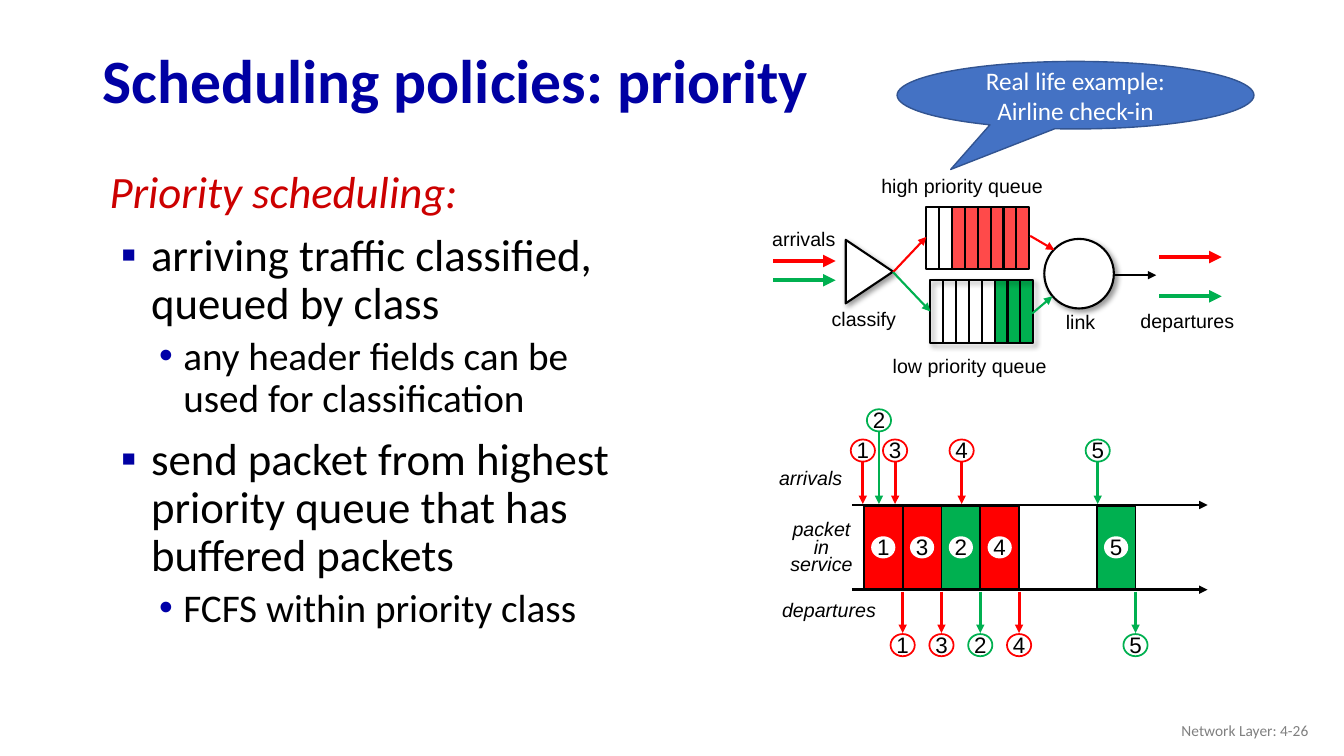
from lxml import etree
from pptx import Presentation
from pptx import util as u
from pptx.dml.color import RGBColor
from pptx.enum import shapes, text
from pptx.oxml import ns

# All lengths are cells of a square grid, ten cells to the inch
CELL = u.Inches(0.1)
COLS, ROWS = 133.33, 75

COLOURS = {
    "title": "0000A3", "subbullet": "0000A8", "heading": "CC0000",
    "black": "000000", "white": "FFFFFF", "footer": "808080",
    "high": "FF0000", "low": "00B050",
    "callout": "4472C4", "callout_edge": "325491",
}
SHAPE = shapes.MSO_SHAPE
ALIGN = text.PP_ALIGN
MIDDLE = text.MSO_ANCHOR.MIDDLE


def cells(*lengths):
    return [round(length * CELL) for length in lengths]


def rgb(name):
    return RGBColor.from_string(COLOURS[name])


def child(parent, tag, **attributes):
    return etree.SubElement(parent, ns.qn(tag), attributes)


# ---- Basic parts ----
def add_run(paragraph, words, size, colour="black", font="Arial", bold=False, italic=False):
    run = paragraph.add_run()
    run.text = words
    run.font.size, run.font.name = u.Pt(size), font
    run.font.bold, run.font.italic = bold, italic
    run.font.color.rgb = rgb(colour)


def text_frame(slide, box, wrap=True, anchor=text.MSO_ANCHOR.TOP):
    frame = slide.shapes.add_textbox(*cells(*box)).text_frame
    frame.word_wrap, frame.vertical_anchor = wrap, anchor
    return frame


def label(slide, box, words, size=14, italic=False, align=ALIGN.CENTER):
    paragraph = text_frame(slide, box, wrap=False).paragraphs[0]
    paragraph.alignment = align
    add_run(paragraph, words, size, italic=italic)


def figure(slide, kind, box, fill=None, edge=None, width=1.5, shadow=False):
    shape = slide.shapes.add_shape(kind, *cells(*box))
    shape.shadow.inherit = False
    if fill:
        shape.fill.solid()
        shape.fill.fore_color.rgb = rgb(fill)
    else:
        shape.fill.background()
    if edge:
        shape.line.color.rgb, shape.line.width = rgb(edge), u.Pt(width)
    else:
        shape.line.fill.background()
    if shadow:
        effects = shape._element.spPr.find(ns.qn("a:effectLst"))
        outer = child(effects, "a:outerShdw", blurRad=str(u.Pt(4)), dist=str(u.Pt(3)),
                      dir="2700000", algn="tl", rotWithShape="0")
        child(child(outer, "a:srgbClr", val=COLOURS["black"]), "a:alpha", val="40000")
    return shape


def line(slide, start, end, colour="black", width=1.5, arrow=True):
    link = slide.shapes.add_connector(shapes.MSO_CONNECTOR.STRAIGHT, *cells(*start, *end))
    link.line.color.rgb, link.line.width = rgb(colour), u.Pt(width)
    if arrow:
        child(link.line._get_or_add_ln(), "a:tailEnd", type="triangle")
    child(link._element.spPr, "a:effectLst")


def packet_number(slide, centre_x, centre_y, number, edge=None):
    figure(slide, SHAPE.OVAL, (centre_x - 1.2, centre_y - 1.1, 2.4, 2.2), "white", edge, 1.25)
    label(slide, (centre_x - 1.65, centre_y - 1.9, 3.3, 3.7), number, 16)


# ---- Text regions ----
def title(slide, box):
    paragraph = text_frame(slide, box, anchor=MIDDLE).paragraphs[0]
    paragraph.line_spacing = 0.9
    add_run(paragraph, "Scheduling policies: priority", 44, "title", "Calibri", bold=True)


def footer(slide, box):
    paragraph = text_frame(slide, box, anchor=MIDDLE).paragraphs[0]
    paragraph.alignment = ALIGN.RIGHT
    add_run(paragraph, "Network Layer: 4-26", 11, "footer", "Calibri")


def body(slide, box, entries):
    # kind: level, size, space before, margin, indent, bullet, bullet colour, text colour
    kinds = {
        "heading": (0, 32, 10, 3.9, -2.4, None, None, "heading"),
        "point": (0, 32, 10, 5.6, -3, "▪", "title", "black"),
        "detail": (1, 28, 5, 8.8, -2.4, "•", "subbullet", "black"),
    }
    frame = text_frame(slide, box)
    for i, (kind, words) in enumerate(entries):
        level, size, before, margin, indent, bullet, bullet_colour, colour = kinds[kind]
        paragraph = frame.add_paragraph() if i else frame.paragraphs[0]
        paragraph.level = level
        paragraph.line_spacing, paragraph.space_before = 0.9, u.Pt(before)
        properties = paragraph._p.get_or_add_pPr()
        for key, length in zip(("marL", "indent"), cells(margin, indent)):
            properties.set(key, str(length))
        if bullet:
            child(child(properties, "a:buClr"), "a:srgbClr", val=COLOURS[bullet_colour])
            child(properties, "a:buFont", typeface="Arial")
            child(properties, "a:buChar", char=bullet)
        add_run(paragraph, words, size, colour, "Calibri", italic=kind == "heading")


def callout(slide, box):
    bubble = figure(slide, SHAPE.OVAL_CALLOUT, box, "callout", "callout_edge", 1)
    bubble.adjustments[0], bubble.adjustments[1] = -0.35, 1.1
    frame = bubble.text_frame
    frame.word_wrap, frame.vertical_anchor = True, MIDDLE
    for i, words in enumerate(("Real life example:", "Airline check-in")):
        paragraph = frame.add_paragraph() if i else frame.paragraphs[0]
        paragraph.alignment = ALIGN.CENTER
        add_run(paragraph, words, 18, "white", "Calibri")


# ---- Queue diagram ----
def queue(slide, box, colour, waiting, opacity=100, shadow=False, slots=8):
    x, y, w, h = box
    slot = w / slots
    filled = figure(slide, SHAPE.RECTANGLE,
                    (x + (slots - waiting) * slot, y, waiting * slot, h), colour)
    if opacity < 100:
        solid = filled._element.spPr.find(ns.qn("a:solidFill"))
        child(solid[0], "a:alpha", val=str(opacity * 1000))
    figure(slide, SHAPE.RECTANGLE, box, edge="black", shadow=shadow)
    for i in range(1, slots):
        line(slide, (x + i * slot, y), (x + i * slot, y + h), arrow=False)


def queue_diagram(slide, box):
    x, y, _, _ = box
    queue(slide, (x + 16.3, y + 3.7, 10.2, 6.2), "high", 6, opacity=71)
    queue(slide, (x + 16.7, y + 11, 10.2, 6.2), "low", 3, shadow=True)
    classifier = figure(slide, SHAPE.ISOSCELES_TRIANGLE, (x + 7.5, y + 7.8, 6.3, 4.7),
                        "white", "black", shadow=True)
    classifier.rotation = 90
    figure(slide, SHAPE.OVAL, (x + 28, y + 6.9, 6.9, 6.9), "white", "black", shadow=True)

    # Paths between the parts: from, to, colour, width
    for x1, y1, x2, y2, colour, width in (
            (13, 10.2, 16.3, 6.7, "high", 1.5), (13, 10.2, 16.7, 14.1, "low", 1.5),
            (26.6, 6.6, 29, 8, "high", 1.5), (26.8, 14.3, 28.8, 12.6, "low", 1.5),
            (34.9, 10.5, 39.1, 10.5, "black", 1.5),
            (1.1, 9.1, 7.3, 9.1, "high", 3), (1.1, 11, 7.3, 11, "low", 3),
            (39.4, 8.7, 45.6, 8.7, "high", 3), (39.4, 12.6, 45.6, 12.6, "low", 3)):
        line(slide, (x + x1, y + y1), (x + x2, y + y2), colour, width)

    for dx, dy, w, words in (
            (10.8, 0, 18.1, "high priority queue"), (11.9, 17.8, 17.4, "low priority queue"),
            (0, 5.2, 8.3, "arrivals"), (5.8, 13.2, 8.6, "classify"),
            (36.5, 13.4, 11.4, "departures"), (29.1, 13.5, 5, "link")):
        label(slide, (x + dx, y + dy, w, 3.4), words)


# ---- Service timeline ----
def timeline(slide, box):
    x, y, w, h = box
    start, slot = x + 9.4, 3.85
    upper, lower = y + 10.2, y + 18.6

    # Packets: number, class, arrival offset, arrival height, service slot
    for number, colour, arrival, rise, turn in (
            ("1", "high", -0.1, 5.4, 0), ("3", "high", 3.1, 5.4, 1),
            ("2", "low", 1.5, 8.4, 2), ("4", "high", 9.7, 5.4, 3),
            ("5", "low", 23.2, 5.4, 6)):
        left, arrives = start + turn * slot, start + arrival
        departs = left + slot
        figure(slide, SHAPE.RECTANGLE, (left, upper + 0.1, slot, lower - upper - 0.1),
               colour, "black", 1.25)
        packet_number(slide, left + slot / 2, upper + 4.2, number)
        packet_number(slide, arrives, upper - rise, number, colour)
        line(slide, (arrives, upper - rise + 1.1), (arrives, upper - 0.1), colour, 2)
        packet_number(slide, departs, lower + 5.5, number, colour)
        line(slide, (departs, lower + 0.2), (departs, lower + 4.3), colour, 2)

    # Time axes and row labels
    for axis in (upper, lower):
        line(slide, (x + 8.2, axis), (x + w, axis), width=2)
    label(slide, (x, upper - 4.4, 8.8, 3.4), "arrivals", italic=True, align=ALIGN.LEFT)
    label(slide, (x + 0.3, lower + 0.3, 11.9, 3.4), "departures", italic=True, align=ALIGN.LEFT)
    service = text_frame(slide, (x + 0.5, upper + 1.2, 9.4, 6.5)).paragraphs[0]
    service.alignment, service.line_spacing = ALIGN.CENTER, u.Pt(12.8)
    add_run(service, "packet in service", 14, italic=True)


def main():
    deck = Presentation()
    deck.slide_width, deck.slide_height = cells(COLS, ROWS)
    slide = deck.slides.add_slide(deck.slide_layouts[6])
    title(slide, (9.2, 3.4, 115, 9.8))
    body(slide, (8.4, 16.4, 55.6, 29.3), (
        ("heading", "Priority scheduling:"),
        ("point", "arriving traffic classified, queued by class"),
        ("detail", "any header fields can be used for classification")))
    body(slide, (8.4, 42.8, 55.6, 21.5), (
        ("point", "send packet from highest priority queue that has buffered packets"),
        ("detail", "FCFS within priority class")))
    queue_diagram(slide, (75.6, 16.8, 47.9, 21.2))
    timeline(slide, (76.3, 39.9, 43.5, 25.9))
    callout(slide, (89, 6.1, 35.4, 6.7))
    footer(slide, (100.8, 70.5, 30, 4))
    deck.save("out.pptx")


if __name__ == "__main__":
    main()
